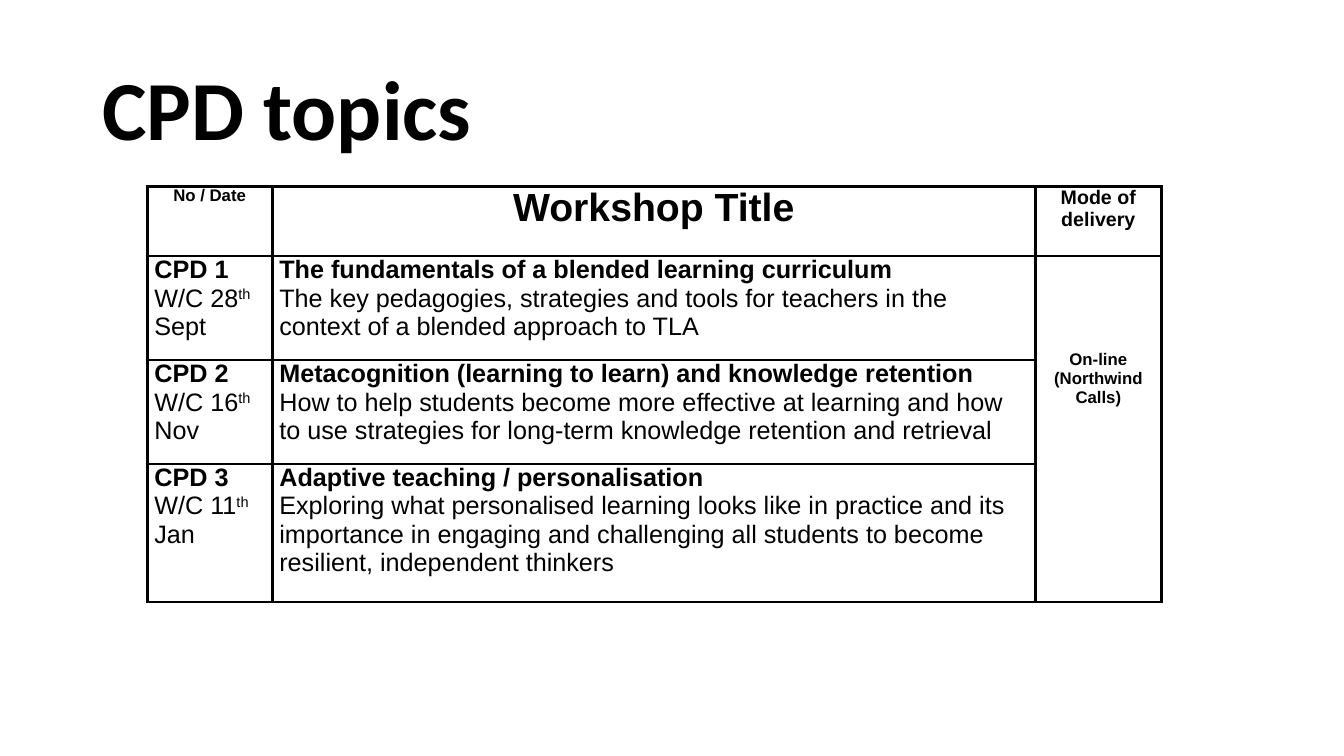
from lxml.etree import SubElement
from pptx import Presentation
from pptx.dml.color import RGBColor
from pptx.enum.text import MSO_ANCHOR, PP_ALIGN
from pptx.oxml.ns import qn
from pptx.util import Cm, Pt

COLOURS = {"ink": "000000", "paper": "FFFFFF"}
HEADINGS = [("No / Date", 12), ("Workshop Title", 28), ("Mode of delivery", 14)]
WORKSHOPS = [
    ("CPD 1", "W/C 28", " Sept", "The fundamentals of a blended learning curriculum",
     "The key pedagogies, strategies and tools for teachers in the context of a "
     "blended approach to TLA"),
    ("CPD 2", "W/C 16", " Nov", "Metacognition (learning to learn) and knowledge retention",
     "How to help students become more effective at learning and how to use "
     "strategies for long-term knowledge retention and retrieval"),
    ("CPD 3", "W/C 11", " Jan", "Adaptive teaching / personalisation",
     "Exploring what personalised learning looks like in practice and its importance "
     "in engaging and challenging all students to become resilient, independent thinkers"),
]
DELIVERY = "On-line (Northwind Calls)"
COLUMN_WIDTHS = [3.15, 19.23, 3.18]
ROW_HEIGHTS = [1.75, 2.62, 2.62, 3.48]


def add_text(paragraph, text, size=18, bold=False, font="Arial", raised=False):
    """Append a formatted run to a paragraph."""
    run = paragraph.add_run()
    run.text = text
    run.font.size = Pt(size)
    run.font.bold = bold
    run.font.name = font
    run.font.color.rgb = RGBColor.from_string(COLOURS["ink"])
    if raised:
        run._r.get_or_add_rPr().set("baseline", "30000")


class TopicsSlide:
    """Hold the table style and the slide being built."""

    def __init__(self, deck):
        self.slide = deck.slides.add_slide(deck.slide_layouts[5])
        self.border = Pt(2.25)
        self.side_margin = Cm(0.18)

    def title(self, text):
        """Place and format the slide title."""
        title = self.slide.shapes.title
        title.left, title.top, title.width, title.height = (
            Cm(2.33), Cm(1.02), Cm(29.21), Cm(3.68))
        title.text_frame.vertical_anchor = MSO_ANCHOR.MIDDLE
        heading = title.text_frame.paragraphs[0]
        heading.alignment = PP_ALIGN.LEFT
        heading.line_spacing = 0.9
        add_text(heading, text, size=60, bold=True, font="Calibri")

    def style_cell(self, cell):
        """Give a cell its borders, fill and margins."""
        properties = cell._tc.get_or_add_tcPr()
        for side in ("a:lnL", "a:lnR", "a:lnT", "a:lnB"):
            line = SubElement(properties, qn(side), w=str(self.border))
            fill = SubElement(line, qn("a:solidFill"))
            SubElement(fill, qn("a:srgbClr"), val=COLOURS["ink"])
        cell.fill.solid()
        cell.fill.fore_color.rgb = RGBColor.from_string(COLOURS["paper"])
        cell.margin_left = cell.margin_right = self.side_margin
        cell.margin_top = cell.margin_bottom = 0

    def centred(self, cell, text, size):
        """Write one bold centred paragraph in a cell."""
        paragraph = cell.text_frame.paragraphs[0]
        paragraph.alignment = PP_ALIGN.CENTER
        add_text(paragraph, text, size=size, bold=True)

    def lead(self, cell, text):
        """Write a bold first line and return the paragraph below it."""
        add_text(cell.text_frame.paragraphs[0], text, bold=True)
        return cell.text_frame.add_paragraph()

    def schedule(self):
        """Build the table of workshops."""
        table = self.slide.shapes.add_table(
            len(ROW_HEIGHTS), len(COLUMN_WIDTHS), Cm(3.71), Cm(4.7),
            Cm(sum(COLUMN_WIDTHS)), Cm(sum(ROW_HEIGHTS))).table
        table.first_row = table.horz_banding = False
        for column, width in zip(table.columns, COLUMN_WIDTHS):
            column.width = Cm(width)
        for row, height in zip(table.rows, ROW_HEIGHTS):
            row.height = Cm(height)
        for cell in table.iter_cells():
            self.style_cell(cell)
        for column, (heading, size) in enumerate(HEADINGS):
            self.centred(table.cell(0, column), heading, size)
        for row, (number, day, month, topic, summary) in enumerate(WORKSHOPS, 1):
            date = self.lead(table.cell(row, 0), number)
            add_text(date, day)
            add_text(date, "th", raised=True)
            add_text(date, month)
            add_text(self.lead(table.cell(row, 1), topic), summary)
        delivery = table.cell(1, 2)
        delivery.merge(table.cell(len(WORKSHOPS), 2))
        delivery.margin_top = Cm(2.38)
        self.centred(delivery, DELIVERY, 12)


def main():
    """Build and save the deck."""
    deck = Presentation()
    deck.slide_width, deck.slide_height = Cm(33.87), Cm(19.05)
    topics = TopicsSlide(deck)
    topics.title("CPD topics")
    topics.schedule()
    deck.save("out.pptx")


if __name__ == "__main__":
    main()
